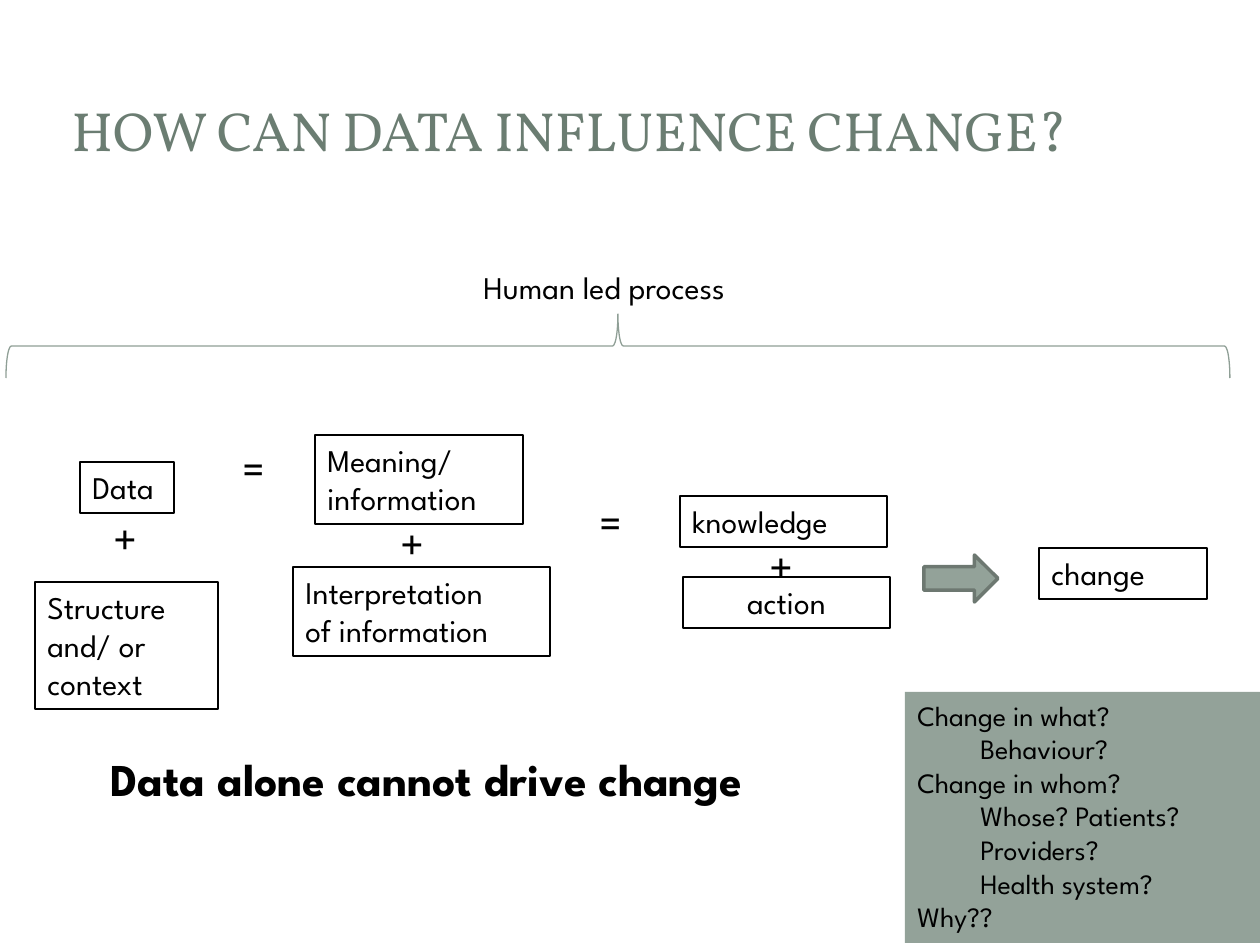
import pptx
import pptx.dml.color
import pptx.enum.shapes
import pptx.enum.text
import pptx.util

THEME = {
    "title_font": "Vollkorn", "body_font": "League Spartan",
    "title": "6B7D72", "ink": "000000", "sage": "93A299",
    "arrow_line": "6D7871", "brace_line": "8F9F96",
    "title_size": 31.5, "label_size": 18, "sign_size": 26, "note_size": 16,
    "thin": 0.75, "thick": 2,
}
TITLE = ("HOW CAN DATA INFLUENCE CHANGE?", (59, 57, 1138, 144))
STEPS = [
    (["Data"], (80, 462, 94, 51)),
    (["Structure", "and/ or context"], (35, 582, 183, 127)),
    (["Meaning/", "information"], (315, 435, 208, 89)),
    (["Interpretation", "of information"], (293, 567, 257, 89)),
    (["knowledge"], (680, 496, 207, 51)),
    (["action"], (683, 577, 207, 51)),
    (["change"], (1039, 548, 168, 51)),
]
SIGNS = [("+", 101, 504), ("=", 230, 434), ("=", 587, 488),
         ("+", 388, 509), ("+", 757, 532)]
SIGN_WIDTH, SIGN_HEIGHT = 53, 68
PROCESS = ("Human led process", (471, 262, 272, 51))
MESSAGE = ("Data alone cannot drive change", (98, 745, 769, 68))
QUESTIONS = [
    ("Change in what?", 0), ("Behaviour?", 1),
    ("Change in whom?", 0), ("Whose? Patients? Providers?", 1),
    ("Health system?", 1), ("Why??", 0),
]
QUESTIONS_FRAME = (905, 692, 355, 251)
INDENT = 63
ARROW_FRAME = (924, 555, 74, 47)
BRACE_FRAME = (586, -266, 64, 1224)


def px(value):
    return pptx.util.Emu(round(value * 914400 / 126))


def color(name):
    return pptx.dml.color.RGBColor.from_string(THEME[name])


def style(para, size, font="body_font", ink="ink", bold=False):
    for span in para.runs:
        span.font.name = THEME[font]
        span.font.size = pptx.util.Pt(THEME[size])
        span.font.color.rgb = color(ink)
        span.font.bold = bold


def outline(shape, name, width):
    shape.line.color.rgb = color(name)
    shape.line.width = pptx.util.Pt(THEME[width])


def add_text(page, lines, frame, size="label_size", wrap=False, bold=False):
    box = page.shapes.add_textbox(*map(px, frame))
    text = box.text_frame
    text.text = "\n".join(lines)
    text.word_wrap = wrap
    text.auto_size = pptx.enum.text.MSO_AUTO_SIZE.SHAPE_TO_FIT_TEXT
    for para in text.paragraphs:
        style(para, size, bold=bold)
    return box


def add_preset(page, kind, frame):
    shape = page.shapes.add_shape(kind, *map(px, frame))
    shape.shadow.inherit = False
    return shape


def add_title(page):
    wording, frame = TITLE
    title = page.shapes.title
    title.left, title.top, title.width, title.height = map(px, frame)
    text = title.text_frame
    text.text = wording
    text.vertical_anchor = pptx.enum.text.MSO_ANCHOR.MIDDLE
    text.paragraphs[0].alignment = pptx.enum.text.PP_ALIGN.LEFT
    style(text.paragraphs[0], "title_size", "title_font", "title")


def add_steps(page):
    for lines, frame in STEPS:
        box = add_text(page, lines, frame, wrap=lines != ["Data"])
        outline(box, "ink", "thin")
        if lines == ["action"]:
            box.text_frame.paragraphs[0].alignment = pptx.enum.text.PP_ALIGN.CENTER
    for sign, left, top in SIGNS:
        add_text(page, [sign], (left, top, SIGN_WIDTH, SIGN_HEIGHT), "sign_size")


def add_questions(page):
    lines = [wording for wording, depth in QUESTIONS]
    box = add_text(page, lines, QUESTIONS_FRAME, "note_size", wrap=True)
    box.fill.solid()
    box.fill.fore_color.rgb = color("sage")
    for para, (wording, depth) in zip(box.text_frame.paragraphs, QUESTIONS):
        if depth:
            properties = para._p.get_or_add_pPr()
            properties.set("marL", str(px(INDENT * depth)))
            properties.set("indent", "0")


def main():
    deck = pptx.Presentation()
    deck.slide_width, deck.slide_height = px(1260), px(945)
    page = deck.slides.add_slide(deck.slide_layouts[5])
    add_title(page)
    add_steps(page)

    kinds = pptx.enum.shapes.MSO_SHAPE
    arrow = add_preset(page, kinds.RIGHT_ARROW, ARROW_FRAME)
    arrow.fill.solid()
    arrow.fill.fore_color.rgb = color("sage")
    outline(arrow, "arrow_line", "thick")

    add_questions(page)

    brace = add_preset(page, kinds.RIGHT_BRACE, BRACE_FRAME)
    brace.rotation = 270
    brace.fill.background()
    outline(brace, "brace_line", "thin")

    process, frame = PROCESS
    add_text(page, [process], frame)
    message, frame = MESSAGE
    add_text(page, [message], frame, "sign_size", bold=True)
    deck.save("out.pptx")


if __name__ == "__main__":
    main()
